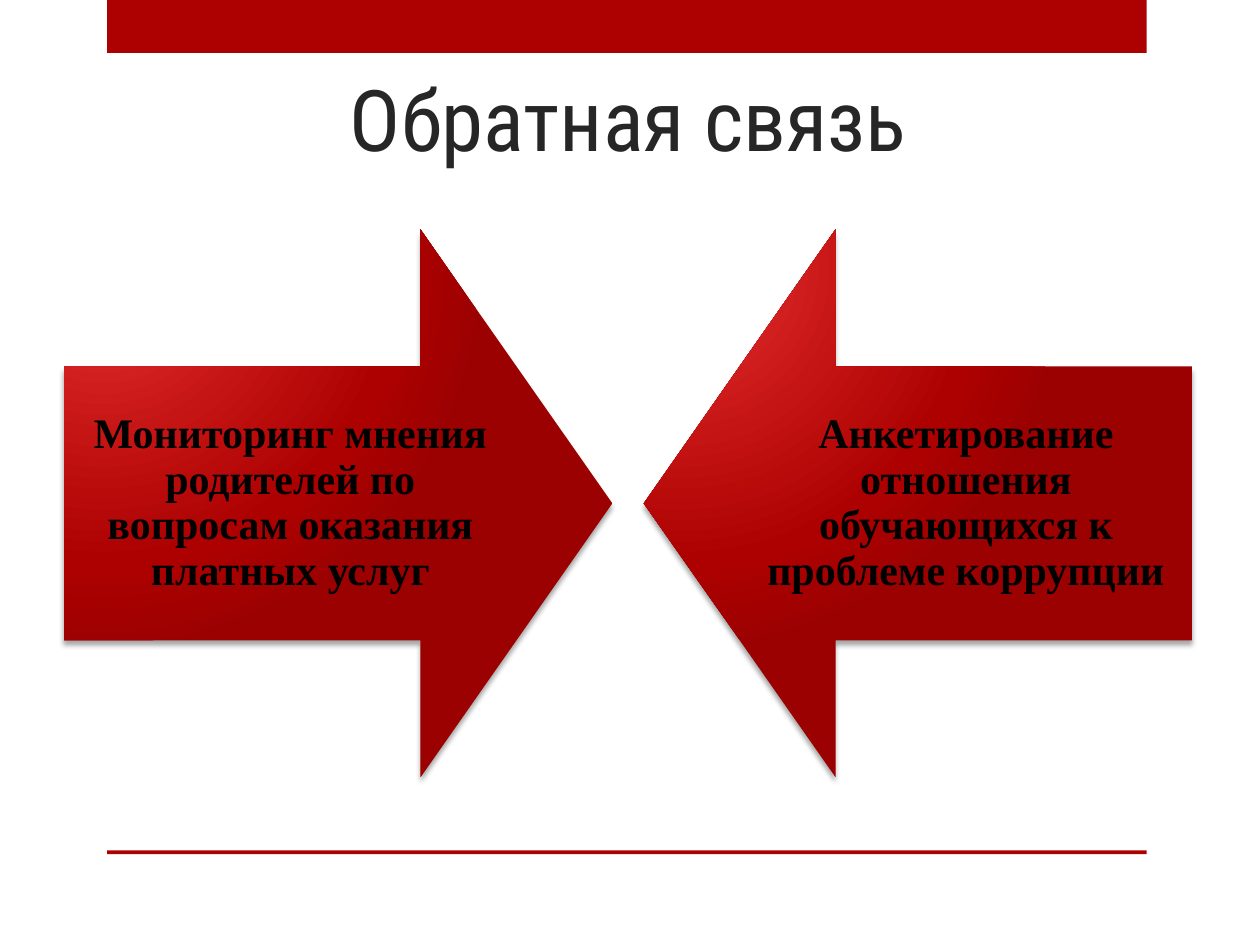
from pptx import Presentation
from pptx.dml.color import RGBColor
from pptx.enum.shapes import MSO_SHAPE
from pptx.enum.text import MSO_ANCHOR, PP_ALIGN
from pptx.oxml import parse_xml
from pptx.oxml.ns import nsdecls, qn
from pptx.util import Inches, Pt

RECT = MSO_SHAPE.RECTANGLE
RIGHT = MSO_SHAPE.RIGHT_ARROW
LEFT = MSO_SHAPE.LEFT_ARROW
CENTER = PP_ALIGN.CENTER
MIDDLE = MSO_ANCHOR.MIDDLE
BOTTOM = MSO_ANCHOR.BOTTOM

RED = RGBColor(0xAD, 0x01, 0x01)
LIGHT = RGBColor(0xE6, 0x2F, 0x2F)
DARK = RGBColor(0x9C, 0x01, 0x01)
GREY = RGBColor(0x26, 0x26, 0x26)
BLACK = RGBColor(0, 0, 0)

# Gradient stops: position in percent, colour
STOPS = [(0, LIGHT), (76, RED), (100, DARK)]

SIZE = 4.35   # side of the square each arrow fills
TOP = 1.82
ARROWS = [
    (0.51, RIGHT, "Мониторинг мнения родителей по вопросам оказания платных услуг"),
    (5.11, LEFT, "Анкетирование отношения обучающихся к проблеме коррупции"),
]


def put_text(shape, text, font, size, color, bold=False, anchor=MIDDLE,
             inset=None, space=None):
    frame = shape.text_frame
    frame.word_wrap = True
    frame.vertical_anchor = anchor
    if inset is not None:
        frame.margin_left = frame.margin_right = Inches(inset)
        frame.margin_top = frame.margin_bottom = Inches(inset)
    para = frame.paragraphs[0]
    para.alignment = CENTER
    if space is not None:
        para.line_spacing = space
    run = para.add_run()
    run.text = text
    run.font.name = font
    run.font.size = Pt(size)
    run.font.bold = bold
    run.font.color.rgb = color


def add_bar(slide, top, height):
    bar = slide.shapes.add_shape(
        RECT, Inches(0.85), Inches(top), Inches(8.25), Inches(height))
    bar.shadow.inherit = False
    bar.fill.solid()
    bar.fill.fore_color.rgb = RED
    bar.line.fill.background()


def add_glow(shape):
    """Give a radial red gradient and a soft shadow below."""
    shape.line.fill.background()
    line = shape.line._ln
    stops = "".join(
        f'<a:gs pos="{pos * 1000}"><a:srgbClr val="{color}"/></a:gs>'
        for pos, color in STOPS)
    line.addprevious(parse_xml(
        f'<a:gradFill {nsdecls("a")} rotWithShape="0"><a:gsLst>{stops}</a:gsLst>'
        '<a:path path="circle">'
        '<a:fillToRect l="15000" t="15000" r="100000" b="100000"/>'
        '</a:path></a:gradFill>'))
    shape.shadow.inherit = False
    effects = shape._element.spPr.find(qn("a:effectLst"))
    effects.append(parse_xml(
        f'<a:outerShdw {nsdecls("a")} blurRad="{Pt(3)}" dist="{Pt(3)}" '
        'dir="5400000" rotWithShape="0"><a:srgbClr val="000000">'
        '<a:alpha val="35000"/></a:srgbClr></a:outerShdw>'))


def add_arrow(slide, left, kind, text):
    arrow = slide.shapes.add_shape(
        kind, Inches(left), Inches(TOP), Inches(SIZE), Inches(SIZE))
    arrow.adjustments[0] = 0.5
    arrow.adjustments[1] = 0.35
    add_glow(arrow)
    put_text(arrow, text, "Times New Roman", 24, BLACK, bold=True,
             inset=0.19, space=0.9)


def main():
    prs = Presentation()
    prs.slide_width = Inches(10)
    prs.slide_height = Inches(7.5)
    slide = prs.slides.add_slide(prs.slide_layouts[6])

    # Top band and bottom rule
    add_bar(slide, 0, 0.42)
    add_bar(slide, 6.75, 0.03)

    # Title
    title = slide.shapes.add_textbox(
        Inches(0.51), Inches(0.52), Inches(8.95), Inches(0.87))
    put_text(title, "Обратная связь", "Roboto Condensed", 48.6, GREY,
             anchor=BOTTOM)

    # Facing arrows
    for left, kind, text in ARROWS:
        add_arrow(slide, left, kind, text)

    prs.save("out.pptx")


if __name__ == "__main__":
    main()
